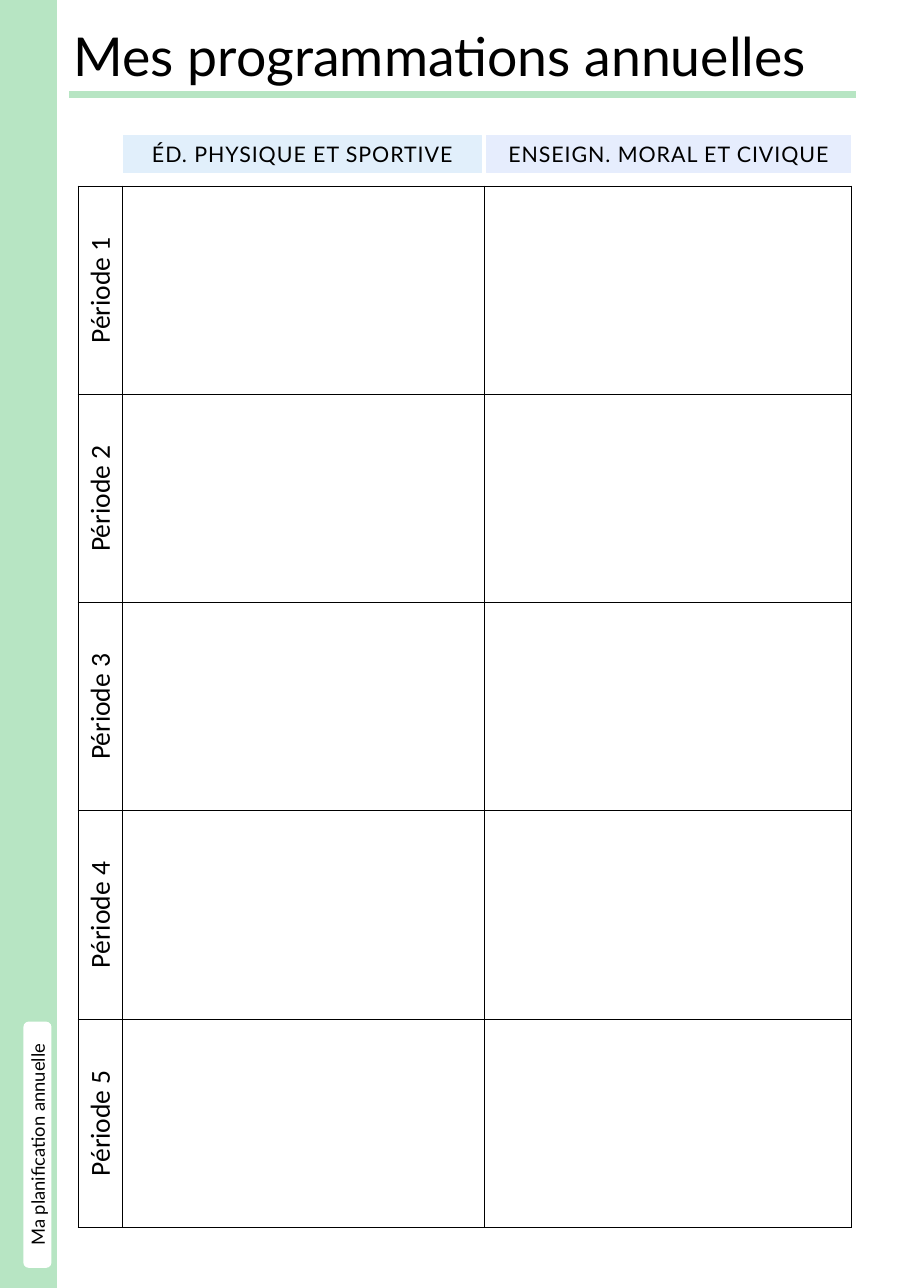
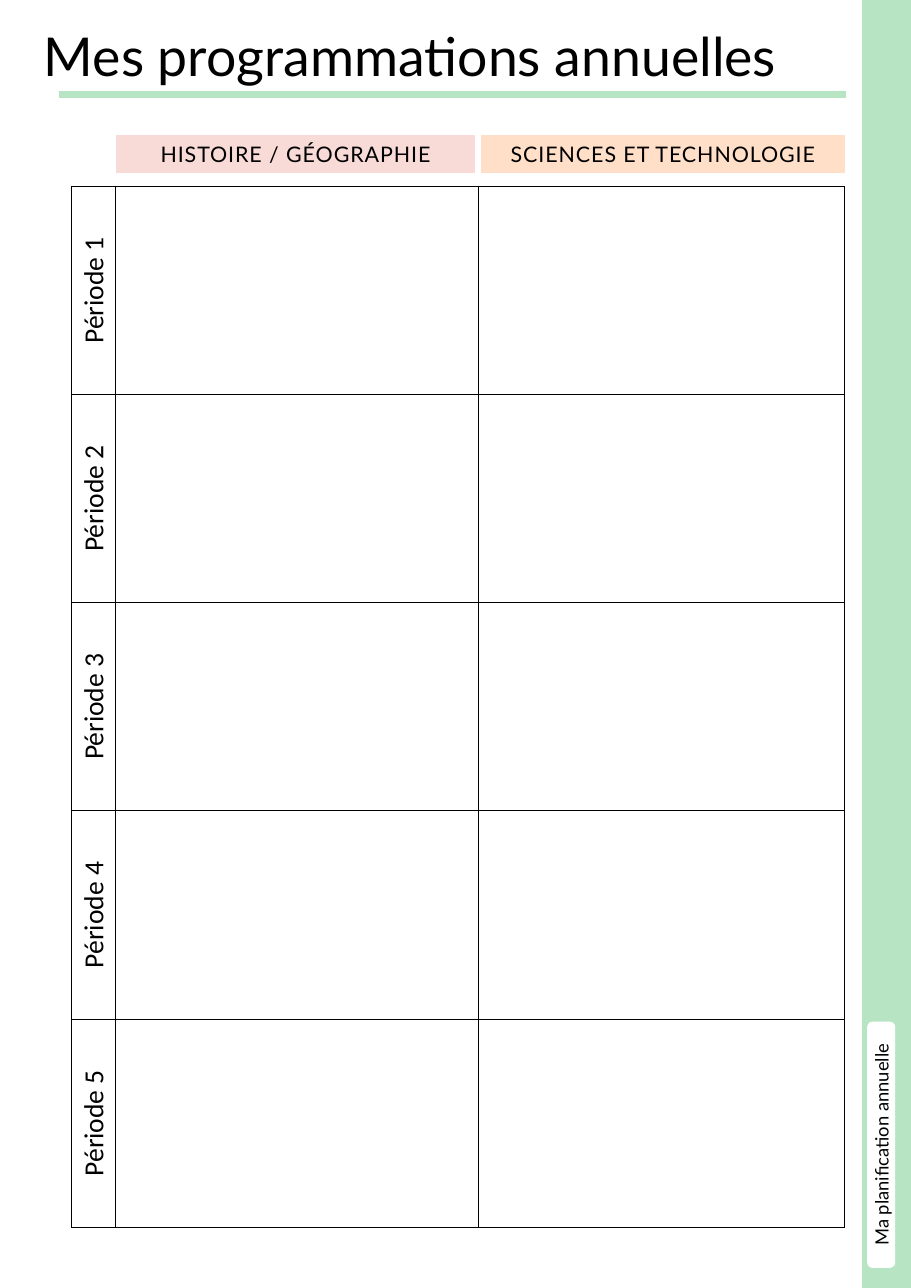
from lxml import etree
from pptx import Presentation
from pptx.dml.color import RGBColor
from pptx.enum.shapes import MSO_CONNECTOR, MSO_SHAPE
from pptx.enum.text import MSO_ANCHOR, PP_ALIGN
from pptx.oxml import parse_xml
from pptx.oxml.ns import qn
from pptx.util import Inches, Pt

GREEN = RGBColor(0xB7, 0xE5, 0xC3)
WHITE = RGBColor(0xFF, 0xFF, 0xFF)
BLACK = RGBColor(0x00, 0x00, 0x00)
BLUE = RGBColor(0xE1, 0xEF, 0xFB)
LILAC = RGBColor(0xE6, 0xED, 0xFD)
PINK = RGBColor(0xF8, 0xDA, 0xD7)
PEACH = RGBColor(0xFF, 0xDF, 0xC8)

WIDE, HIGH = 8.27, 11.69
COLS = [0.4, 3.29, 3.33]
ROWS, ROW = 5, 1.89
EDGE = (
    '<a:{} xmlns:a="http://schemas.openxmlformats.org/drawingml/2006/main" w="9525">'
    '<a:solidFill><a:srgbClr val="{}"/></a:solidFill></a:{}>'
)

# Each page: side band (left, width), tab left, title (left, width),
# rule left, table left, heads (left, width, colour, text)
PAGES = [
    ((0, 0.51), 0.22, (0.57, 7.7), 0.63, 0.71, [
        (1.12, 3.25, BLUE, "ÉD. PHYSIQUE ET SPORTIVE"),
        (4.42, 3.3, LILAC, "ENSEIGN. MORAL ET CIVIQUE")]),
    ((7.83, 0.43), 7.88, (0.3, 7.67), 0.54, 0.65, [
        (1.06, 3.25, PINK, "HISTOIRE / GÉOGRAPHIE"),
        (4.37, 3.3, PEACH, "SCIENCES ET TECHNOLOGIE")]),
]


def add_box(slide, kind, left, top, width, height, color, line):
    box = slide.shapes.add_shape(
        kind, Inches(left), Inches(top), Inches(width), Inches(height))
    box.shadow.inherit = False
    box.fill.solid()
    box.fill.fore_color.rgb = color
    box.line.color.rgb = color
    box.line.width = Pt(line)
    return box


def add_text(frame, text, size, face="Lato", align=PP_ALIGN.CENTER):
    para = frame.paragraphs[0]
    para.alignment = align
    run = para.add_run()
    run.text = text
    run.font.size = Pt(size)
    run.font.name = face
    run.font.color.rgb = BLACK
    return run


deck = Presentation()
deck.slide_width, deck.slide_height = Inches(WIDE), Inches(HIGH)

for band, tab_x, title, rule_x, grid_x, heads in PAGES:
    slide = deck.slides.add_slide(deck.slide_layouts[6])

    # Title
    box = slide.shapes.add_textbox(
        Inches(title[0]), Inches(0.16), Inches(title[1]), Inches(0.69))
    box.text_frame.word_wrap = True
    add_text(box.text_frame, "Mes programmations annuelles", 35, align=PP_ALIGN.LEFT)

    # Side band and its tab
    add_box(slide, MSO_SHAPE.RECTANGLE, band[0], 0, band[1], HIGH, GREEN, 1)
    tab = add_box(slide, MSO_SHAPE.ROUNDED_RECTANGLE, tab_x, 9.28, 0.24, 2.22, WHITE, 1)
    tab.text_frame._txBody.bodyPr.set("vert", "vert270")
    add_text(tab.text_frame, "Ma planification annuelle", 12)

    # Rule under the title
    rule = slide.shapes.add_connector(
        MSO_CONNECTOR.STRAIGHT, Inches(rule_x), Inches(0.86),
        Inches(rule_x + 7.14), Inches(0.86))
    rule.line.color.rgb = GREEN
    rule.line.width = Pt(4.75)
    etree.SubElement(rule._element.spPr, qn("a:effectLst"))

    # Grid of periods
    grid = slide.shapes.add_table(
        ROWS, len(COLS), Inches(grid_x), Inches(1.69),
        Inches(sum(COLS)), Inches(ROWS * ROW)).table
    grid.first_row = grid.horz_banding = False
    for col, width in zip(grid.columns, COLS):
        col.width = Inches(width)
    for num, row in enumerate(grid.rows, 1):
        row.height = Inches(ROW)
        for cell in row.cells:
            cell.fill.background()
            props = cell._tc.get_or_add_tcPr()
            for pos, side in enumerate(("lnL", "lnR", "lnT", "lnB")):
                props.insert(pos, parse_xml(EDGE.format(side, BLACK, side)))
        label = row.cells[0]
        label.vertical_anchor = MSO_ANCHOR.MIDDLE
        label._tc.tcPr.set("vert", "vert270")
        add_text(label.text_frame, f"Période {num}", 18, "Calibri")

    # Subject heads
    for left, width, color, text in heads:
        head = add_box(slide, MSO_SHAPE.RECTANGLE, left, 1.23, width, 0.34, color, 0.75)
        head.text_frame.vertical_anchor = MSO_ANCHOR.TOP
        run = add_text(head.text_frame, text, 14)
        run.font._element.set("spc", "60")

deck.save("out.pptx")
